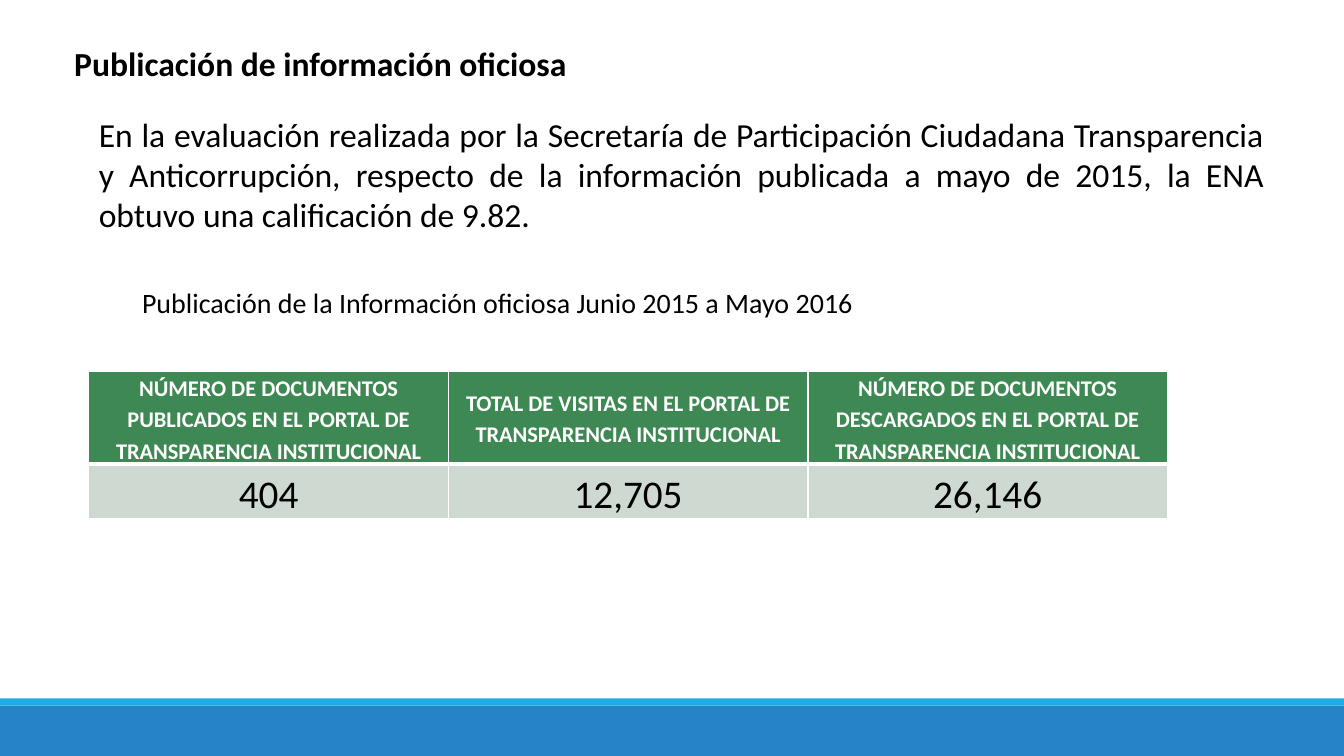
"""Build the slide on the publication of official information."""
from lxml import etree
from pptx import Presentation
from pptx.dml.color import RGBColor
from pptx.enum.shapes import MSO_SHAPE
from pptx.enum.text import MSO_ANCHOR, MSO_AUTO_SIZE, PP_ALIGN
from pptx.oxml.ns import qn
from pptx.util import Cm, Pt

RECTANGLE = MSO_SHAPE.RECTANGLE
MIDDLE = MSO_ANCHOR.MIDDLE
GROW = MSO_AUTO_SIZE.SHAPE_TO_FIT_TEXT
LEFT, CENTER, JUSTIFY = PP_ALIGN.LEFT, PP_ALIGN.CENTER, PP_ALIGN.JUSTIFY

FONT = "Calibri"
BLACK, WHITE = "000000", "FFFFFF"
BLUE, CYAN = "2683C6", "1CADE4"
GREEN, PALE_GREEN = "3E8853", "CEDAD1"
SLIDE_WIDTH, SLIDE_HEIGHT = 33.87, 19.05

HEADERS = [
    "NÚMERO DE DOCUMENTOS PUBLICADOS EN EL PORTAL DE TRANSPARENCIA INSTITUCIONAL",
    "TOTAL DE VISITAS EN EL PORTAL DE TRANSPARENCIA INSTITUCIONAL",
    "NÚMERO DE DOCUMENTOS DESCARGADOS EN EL PORTAL DE TRANSPARENCIA INSTITUCIONAL",
]
TOTALS = ["404", "12,705", "26,146"]


def rgb(color):
    """Turn a hex string into a colour."""
    return RGBColor.from_string(color)


def style(p, size, color=BLACK, bold=False, align=LEFT):
    """Set the font and alignment of a paragraph."""
    p.alignment = align
    p.font.name = FONT
    p.font.size = Pt(size)
    p.font.bold = bold
    p.font.color.rgb = rgb(color)


def add_band(s, top, height, color):
    """Add a full-width band."""
    sp = s.shapes.add_shape(RECTANGLE, 0, Cm(top), Cm(SLIDE_WIDTH), Cm(height))
    sp.shadow.inherit = False
    sp.fill.solid()
    sp.fill.fore_color.rgb = rgb(color)
    sp.line.fill.background()


def add_text(s, text, left, top, width, height, size, wrap=True, **look):
    """Add a text box with one paragraph."""
    sp = s.shapes.add_textbox(Cm(left), Cm(top), Cm(width), Cm(height))
    tf = sp.text_frame
    tf.word_wrap = wrap
    tf.auto_size = GROW
    p = tf.paragraphs[0]
    p.text = text
    style(p, size, **look)


def set_borders(cell, **widths):
    """Give a cell white borders, with widths in points keyed by side."""
    for side in "LRTB":
        ln = etree.SubElement(cell._tc.get_or_add_tcPr(), qn(f"a:ln{side}"),
                              w=str(Pt(widths.get(side, 1))))
        fill = etree.SubElement(ln, qn("a:solidFill"))
        etree.SubElement(fill, qn("a:srgbClr"), val=WHITE)


def fill_row(cells, texts, fill, borders, size, **look):
    """Write and format one table row."""
    for cell, text in zip(cells, texts):
        cell.margin_left = cell.margin_right = Cm(0.18)
        cell.margin_top = cell.margin_bottom = 0
        cell.vertical_anchor = MIDDLE
        set_borders(cell, **borders)
        cell.fill.solid()
        cell.fill.fore_color.rgb = rgb(fill)
        p = cell.text_frame.paragraphs[0]
        p.text = text
        p.line_spacing = 1.15
        style(p, size, align=CENTER, **look)


def add_totals_table(s):
    """Add the table of portal totals."""
    heights = [2.33, 1.38]
    table = s.shapes.add_table(len(heights), len(HEADERS), Cm(2.24), Cm(9.35),
                               Cm(27.18), Cm(sum(heights))).table
    for row, height in zip(table.rows, heights):
        row.height = Cm(height)
    header, body = table.rows
    fill_row(header.cells, HEADERS, GREEN, {"B": 3}, 16, color=WHITE, bold=True)
    fill_row(body.cells, TOTALS, PALE_GREEN, {"T": 3}, 28)


def main():
    """Build and save the slide."""
    prs = Presentation()
    prs.slide_width, prs.slide_height = Cm(SLIDE_WIDTH), Cm(SLIDE_HEIGHT)
    s = prs.slides.add_slide(prs.slide_layouts[6])
    add_band(s, 17.78, 1.27, BLUE)
    add_band(s, 17.6, 0.18, CYAN)
    add_text(s, "Publicación de información oficiosa",
             1.62, 0.95, 13.03, 1.28, 24, wrap=False, bold=True)
    add_text(s, "En la evaluación realizada por la Secretaría de Participación "
             "Ciudadana Transparencia y Anticorrupción, respecto de la información "
             "publicada a mayo de 2015, la ENA obtuvo una calificación de 9.82.",
             2.24, 2.74, 29.87, 3.33, 24, align=JUSTIFY)
    add_text(s, "Publicación de la Información oficiosa Junio 2015 a Mayo 2016",
             3.33, 7.06, 20.45, 1.11, 20)
    add_totals_table(s)
    prs.save("out.pptx")


if __name__ == "__main__":
    main()
